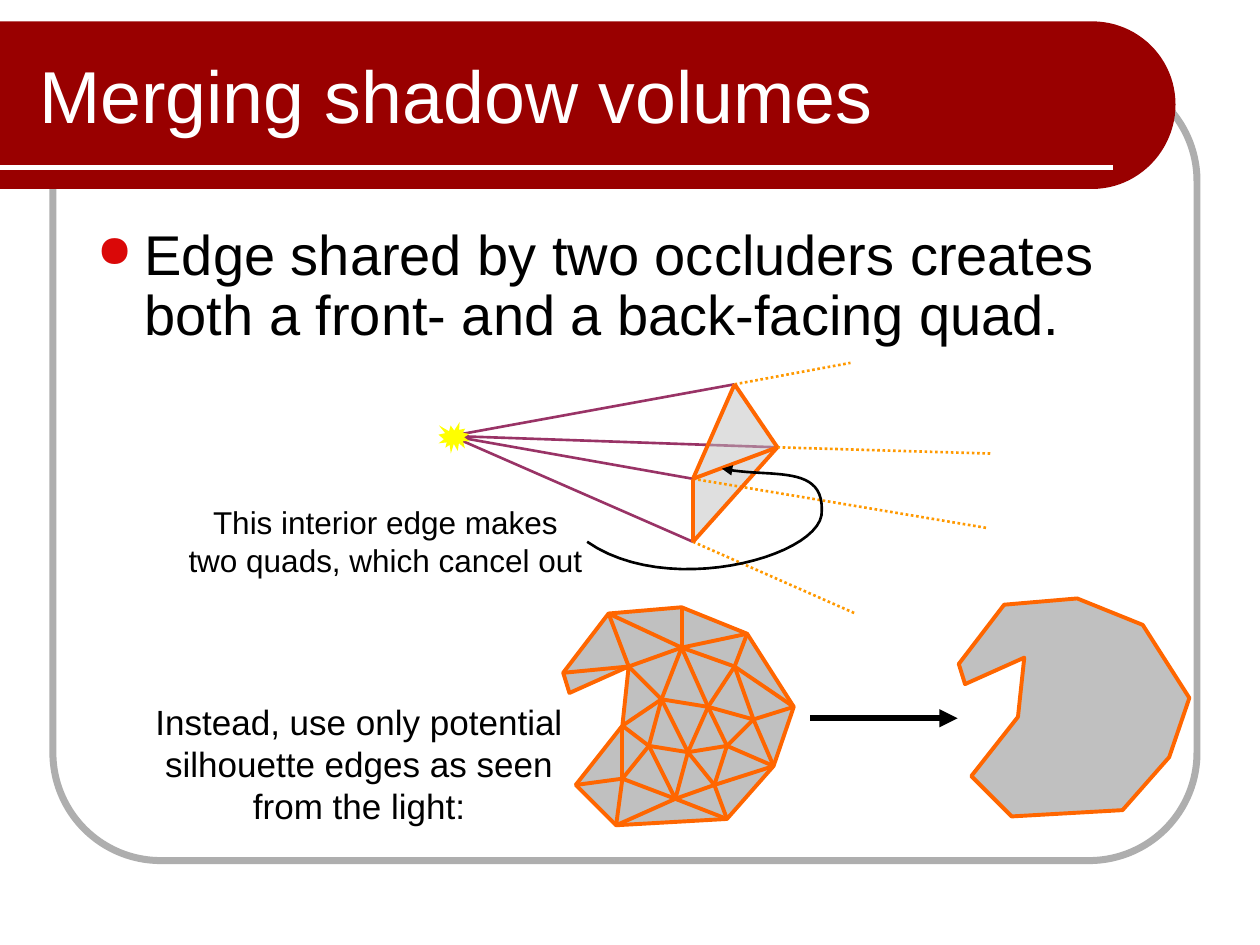
from lxml import etree
from pptx import Presentation
from pptx.dml.color import RGBColor
from pptx.enum.dml import MSO_LINE
from pptx.enum.shapes import MSO_CONNECTOR, MSO_SHAPE
from pptx.enum.text import MSO_ANCHOR, MSO_AUTO_SIZE, PP_ALIGN
from pptx.oxml.ns import qn
from pptx.util import Inches, Pt

STRAIGHT = MSO_CONNECTOR.STRAIGHT
ROUNDED, BURST = MSO_SHAPE.ROUNDED_RECTANGLE, MSO_SHAPE.EXPLOSION1
DOTTED = MSO_LINE.ROUND_DOT
LEFT, CENTER = PP_ALIGN.LEFT, PP_ALIGN.CENTER
TOP, MIDDLE = MSO_ANCHOR.TOP, MSO_ANCHOR.MIDDLE
FIXED_SIZE = MSO_AUTO_SIZE.NONE

BLACK, WHITE, GRAY = "000000", "FFFFFF", "C0C0C0"
FRAME_GRAY, BANNER_RED, BULLET_RED = "AEAEAE", "990000", "DA0808"
EDGE_ORANGE, SHADOW_ORANGE, RAY_PURPLE, SUN_YELLOW = "FF6600", "FF9900", "993366", "FFFF00"

LIGHT = (3.58, 3.46)
# Corners of the two occluders, each with the far end of its shadow ray
APEX, RIGHT, INNER, BOTTOM = (5.83, 3.05), (6.17, 3.55), (5.5, 3.8), (5.5, 4.3)
SHADOW_ENDS = {RIGHT: (7.87, 3.6), BOTTOM: (6.79, 4.87), INNER: (7.83, 4.19), APEX: (6.75, 2.88)}

SILHOUETTE = [(4.47, 5.34), (4.83, 4.87), (5.41, 4.82), (5.93, 5.03), (6.3, 5.61), (6.14, 6.08),
              (5.77, 6.5), (4.89, 6.55), (4.57, 6.23), (4.94, 5.76), (4.99, 5.29), (4.52, 5.5)]
INTERIOR = [(5.41, 5.14), (5.62, 5.61), (5.25, 5.55), (5.46, 5.97), (5.15, 5.92), (4.94, 6.18),
            (5.36, 6.34), (5.83, 5.29), (5.98, 5.71), (5.77, 5.92), (5.67, 6.23)]
# Vertex numbers run through SILHOUETTE and then INTERIOR
MESH_EDGES = {10: [0, 1, 12, 14], 12: [1, 2, 3, 13, 14, 19], 13: [15, 19, 20, 21],
              14: [9, 13, 15, 16], 15: [21, 22], 16: [9, 15, 17, 18], 17: [7, 8, 9, 18],
              18: [6, 7, 15, 22], 19: [3, 4, 20], 20: [4, 5, 21], 21: [5, 22], 22: [5, 6]}
SILHOUETTE_SHIFT = (3.14, -0.07)


def color(hex_code):
    return RGBColor.from_string(hex_code)


def add_arrowhead(shape):
    outline = shape.element.spPr.find(qn("a:ln"))
    etree.SubElement(outline, qn("a:tailEnd"), type="triangle")


def paint(shape, fill=None, line=None, weight=1, opacity=None):
    shape.shadow.inherit = False
    if fill:
        shape.fill.solid()
        shape.fill.fore_color.rgb = color(fill)
        if opacity:
            tint = shape.element.spPr.find(qn("a:solidFill"))[0]
            etree.SubElement(tint, qn("a:alpha"), val=str(opacity * 1000))
    else:
        shape.fill.background()
    if line:
        shape.line.color.rgb = color(line)
        shape.line.width = Pt(weight)
    else:
        shape.line.fill.background()


def add_preset(shapes, kind, left, top, width, height, **style):
    shape = shapes.add_shape(kind, Inches(left), Inches(top), Inches(width), Inches(height))
    paint(shape, **style)
    return shape


def add_outline(shapes, points, close=True, **style):
    corners = [(Inches(x), Inches(y)) for x, y in points]
    builder = shapes.build_freeform(*corners[0])
    builder.add_line_segments(corners[1:], close=close)
    shape = builder.convert_to_shape()
    paint(shape, **style)
    return shape


def add_line(shapes, start, end, line, weight, dash=None, arrow=False):
    connector = shapes.add_connector(STRAIGHT, *(Inches(value) for value in (*start, *end)))
    connector.line.color.rgb = color(line)
    connector.line.width = Pt(weight)
    if dash:
        connector.line.dash_style = dash
    if arrow:
        add_arrowhead(connector)
    etree.SubElement(connector.element.spPr, qn("a:effectLst"))


def curve(start, first, second, end, steps=24):
    """Return the points of a cubic Bezier curve, both ends included."""
    points = []
    for step in range(steps + 1):
        t = step / steps
        weights = ((1 - t) ** 3, 3 * t * (1 - t) ** 2, 3 * t ** 2 * (1 - t), t ** 3)
        points.append(tuple(sum(weight * point[axis] for weight, point
                                in zip(weights, (start, first, second, end)))
                            for axis in (0, 1)))
    return points


def write_text(box, text, size, ink=BLACK, align=LEFT, anchor=TOP, wrap=True):
    frame = box.text_frame
    frame.text = text
    frame.word_wrap = wrap
    frame.auto_size = FIXED_SIZE
    frame.vertical_anchor = anchor
    for para in frame.paragraphs:
        para.alignment = align
        for span in para.runs:
            span.font.name = "Arial"
            span.font.size = Pt(size)
            span.font.color.rgb = color(ink)


def add_text(shapes, text, left, top, width, height, **style):
    box = shapes.add_textbox(Inches(left), Inches(top), Inches(width), Inches(height))
    write_text(box, text, **style)
    return box


def add_bullet(para):
    properties = para._p.get_or_add_pPr()
    properties.set("marL", str(Inches(0.38)))
    properties.set("indent", str(-Inches(0.38)))
    tint = etree.SubElement(properties, qn("a:buClr"))
    etree.SubElement(tint, qn("a:srgbClr"), val=BULLET_RED)
    etree.SubElement(properties, qn("a:buSzPct"), val="80000")
    etree.SubElement(properties, qn("a:buChar"), char="●")
    para.line_spacing = 0.9


def draw_frame(shapes):
    frame = add_preset(shapes, ROUNDED, 0.42, 0.58, 9.08, 6.25, line=FRAME_GRAY, weight=4)
    frame.adjustments[0] = 0.137
    upper = curve((8.67, 0.17), (9.03, 0.17), (9.33, 0.46), (9.33, 0.83))
    lower = curve((9.33, 0.83), (9.33, 1.2), (9.03, 1.5), (8.67, 1.5))
    add_outline(shapes, [(0, 0.17), *upper, *lower[1:], (0, 1.5)], fill=BANNER_RED)
    add_line(shapes, (0, 1.33), (8.83, 1.33), WHITE, 3)


def place_title(page, text):
    title = page.shapes.title
    title.left, title.top = Inches(0.21), Inches(0.25)
    title.width, title.height = Inches(7.79), Inches(1)
    write_text(title, text, size=42, ink=WHITE, anchor=MIDDLE)
    # Bring the title in front of the banner
    title.element.getparent().append(title.element)


def draw_occluders(shapes):
    for corner in SHADOW_ENDS:
        add_line(shapes, LIGHT, corner, RAY_PURPLE, 1.5)
    for tip in (APEX, BOTTOM):
        add_outline(shapes, [tip, RIGHT, INNER], fill=GRAY, opacity=50)
    for corner, end in SHADOW_ENDS.items():
        add_line(shapes, corner, end, SHADOW_ORANGE, 1.5, dash=DOTTED)
    for start, end in ((RIGHT, BOTTOM), (BOTTOM, INNER), (INNER, RIGHT),
                       (APEX, INNER), (RIGHT, APEX)):
        add_line(shapes, start, end, EDGE_ORANGE, 2.25)
    add_preset(shapes, BURST, 3.48, 3.35, 0.25, 0.25, fill=SUN_YELLOW)
    add_text(shapes, "This interior edge makes\ntwo quads, which cancel out",
             1.38, 3.94, 3.36, 0.71, size=18, align=CENTER, anchor=MIDDLE, wrap=False)
    sweep = curve((4.66, 4.3), (5.29, 4.74), (6.46, 4.43), (6.52, 4.09))
    hook = curve((6.52, 4.09), (6.56, 3.67), (6.12, 3.8), (5.73, 3.72))
    pointer = add_outline(shapes, sweep + hook[1:], close=False, line=BLACK, weight=1.5)
    add_arrowhead(pointer)


def draw_mesh(shapes):
    add_outline(shapes, SILHOUETTE, fill=GRAY, line=EDGE_ORANGE, weight=2.25)
    vertices = SILHOUETTE + INTERIOR
    for start, ends in MESH_EDGES.items():
        for end in ends:
            add_line(shapes, vertices[start], vertices[end], EDGE_ORANGE, 2.25)


def main():
    deck = Presentation()
    deck.slide_width, deck.slide_height = Inches(10), Inches(7.5)
    page = deck.slides.add_slide(deck.slide_layouts[5])
    shapes = page.shapes
    draw_frame(shapes)
    place_title(page, "Merging shadow volumes")
    body = add_text(shapes, "Edge shared by two occluders creates both a front- "
                    "and a back-facing quad.", 0.67, 1.75, 8.67, 4.83, size=32)
    add_bullet(body.text_frame.paragraphs[0])
    draw_occluders(shapes.add_group_shape().shapes)
    draw_mesh(shapes.add_group_shape().shapes)
    shift_x, shift_y = SILHOUETTE_SHIFT
    add_outline(shapes, [(x + shift_x, y + shift_y) for x, y in SILHOUETTE],
                fill=GRAY, line=EDGE_ORANGE, weight=2.25)
    add_line(shapes, (6.43, 5.7), (7.6, 5.7), BLACK, 3.5, arrow=True)
    add_text(shapes, "Instead, use only potential silhouette edges as seen from the light:",
             0.94, 5.51, 3.82, 1.11, size=20, align=CENTER)
    deck.save("out.pptx")


if __name__ == "__main__":
    main()
